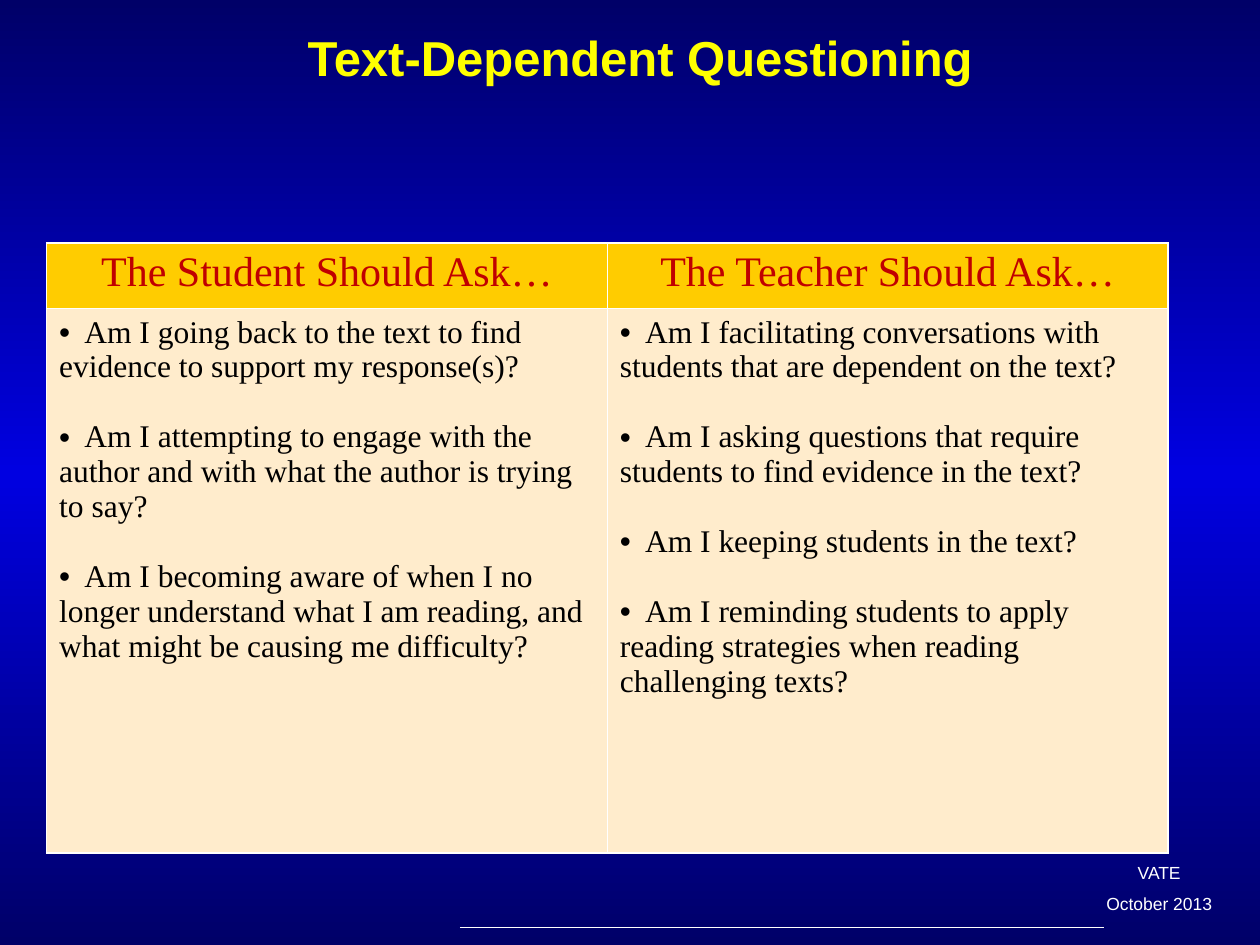
from copy import deepcopy
from dataclasses import dataclass

from lxml.etree import SubElement
from pptx import Presentation
from pptx.dml.color import RGBColor
from pptx.enum.shapes import MSO_CONNECTOR
from pptx.enum.text import MSO_ANCHOR, MSO_AUTO_SIZE, PP_ALIGN
from pptx.oxml.ns import qn
from pptx.util import Inches, Pt

NAVY = RGBColor(0x00, 0x00, 0x68)
BLUE = RGBColor(0x00, 0x00, 0xE1)
WHITE = RGBColor(0xFF, 0xFF, 0xFF)
YELLOW = RGBColor(0xFF, 0xFF, 0x00)
GOLD = RGBColor(0xFF, 0xCC, 0x00)
CREAM = RGBColor(0xFF, 0xEC, 0xCC)
RED = RGBColor(0xC0, 0x00, 0x00)
BLACK = RGBColor(0x00, 0x00, 0x00)
SANS, SERIF = "Arial", "Times New Roman"


@dataclass(frozen=True)
class QuestionColumn:
    heading: str
    questions: list[str]


COLUMNS = [
    QuestionColumn("The Student Should Ask…", [
        "Am I going back to the text to find evidence to support my response(s)?",
        "Am I attempting to engage with the author and with what the author is trying to say?",
        "Am I becoming aware of when I no longer understand what I am reading, "
        "and what might be causing me difficulty?",
    ]),
    QuestionColumn("The Teacher Should Ask…", [
        "Am I facilitating conversations with students that are dependent on the text?",
        "Am I asking questions that require students to find evidence in the text?",
        "Am I keeping students in the text?",
        "Am I reminding students to apply reading strategies when reading challenging texts?",
    ]),
]


def add_bullet(paragraph) -> None:
    """Bullet at the margin, first line tabbed in, wrapped lines at the margin."""
    properties = paragraph._p.get_or_add_pPr()
    properties.set("marL", "0")
    properties.set("indent", "0")
    SubElement(properties, qn("a:buFont"), typeface="Arial")
    SubElement(properties, qn("a:buChar"), char="•")
    tabs = SubElement(properties, qn("a:tabLst"))
    SubElement(tabs, qn("a:tab"), pos=str(Inches(0.2)), algn="l")


def write_text(text_frame, lines: list[str], *, size: float, color: RGBColor,
               font: str = SANS, bold: bool = False, align=PP_ALIGN.CENTER,
               gap: float = 0, line_spacing: float | None = None,
               bullet: bool = False) -> None:
    for index, line in enumerate(lines):
        paragraph = text_frame.add_paragraph() if index else text_frame.paragraphs[0]
        paragraph.alignment = align
        if line_spacing:
            paragraph.line_spacing = line_spacing
        paragraph.space_before = Pt(gap if index else 0)
        if bullet:
            add_bullet(paragraph)
        run = paragraph.add_run()
        run.text = "\t" + line if bullet else line
        run.font.name = font
        run.font.size = Pt(size)
        run.font.bold = bold
        run.font.color.rgb = color


def format_cell(cell, fill: RGBColor) -> None:
    """White hairlines on every side, then the fill."""
    properties = cell._tc.get_or_add_tcPr()
    for side in ("a:lnL", "a:lnR", "a:lnT", "a:lnB"):
        line = SubElement(properties, qn(side), w=str(Pt(1)))
        line_fill = SubElement(line, qn("a:solidFill"))
        SubElement(line_fill, qn("a:srgbClr"), val=str(WHITE))
    cell.fill.solid()
    cell.fill.fore_color.rgb = fill


def set_background(slide) -> None:
    fill = slide.background.fill
    fill.gradient()
    fill.gradient_angle = 90
    stop_list = slide.element.find(".//" + qn("a:gsLst"))
    stop_list.append(deepcopy(stop_list[0]))
    for stop, color, position in zip(fill.gradient_stops, (NAVY, BLUE, NAVY), (0, 0.5, 1)):
        stop.color.rgb = color
        stop.position = position


def add_footer(slide) -> None:
    rule = slide.shapes.add_connector(
        MSO_CONNECTOR.STRAIGHT, Inches(3.65), Inches(7.36), Inches(8.76), Inches(7.36))
    rule.line.color.rgb = WHITE
    rule.line.width = Pt(0.75)
    SubElement(rule._element.spPr, qn("a:effectLst"))

    box = slide.shapes.add_textbox(Inches(8.4), Inches(6.79), Inches(1.6), Inches(0.52))
    box.text_frame.word_wrap = True
    write_text(box.text_frame, ["VATE", "October 2013"], size=10, color=WHITE, gap=6)


def add_question_table(slide) -> None:
    table = slide.shapes.add_table(
        2, len(COLUMNS), Inches(0.37), Inches(1.93), Inches(8.9), Inches(4.84)).table
    table.rows[0].height = Inches(0.52)
    table.rows[1].height = Inches(4.32)
    for index, column in enumerate(COLUMNS):
        header, body = table.cell(0, index), table.cell(1, index)
        format_cell(header, GOLD)
        write_text(header.text_frame, [column.heading], size=24, color=RED, font=SERIF)
        format_cell(body, CREAM)
        write_text(body.text_frame, column.questions, size=18, color=BLACK, font=SERIF,
                   align=PP_ALIGN.LEFT, gap=20, bullet=True)


def add_title(slide) -> None:
    title = slide.shapes.title
    title.left, title.top = Inches(0.58), Inches(-0.17)
    title.width, title.height = Inches(9), Inches(1.33)
    title.text_frame.auto_size = MSO_AUTO_SIZE.NONE
    title.text_frame.vertical_anchor = MSO_ANCHOR.MIDDLE
    write_text(title.text_frame, ["Text-Dependent Questioning"], size=28,
               color=YELLOW, bold=True, line_spacing=0.8)


def main() -> None:
    presentation = Presentation()
    presentation.slide_width, presentation.slide_height = Inches(10), Inches(7.5)
    slide = presentation.slides.add_slide(presentation.slide_layouts[5])
    set_background(slide)
    add_footer(slide)
    add_question_table(slide)
    add_title(slide)
    presentation.save("out.pptx")


if __name__ == "__main__":
    main()
